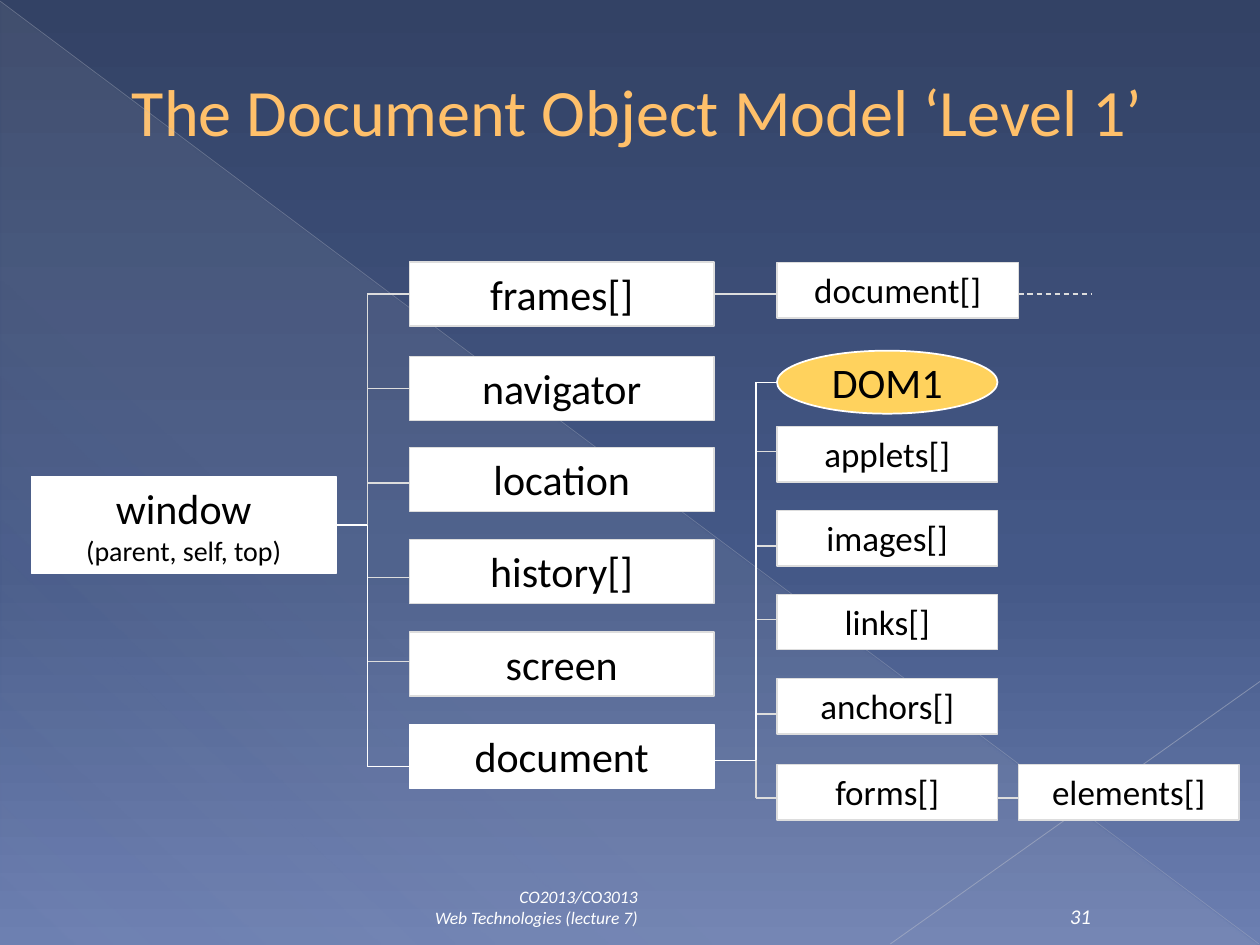
from lxml import etree
from pptx import Presentation
from pptx import util as u
from pptx.dml.color import RGBColor
from pptx.enum import dml, shapes, text
from pptx.oxml import ns

COLORS = {
    "top": "334265", "middle": "445887", "bottom": "6C7FB1",
    "veil": "D4D4D6", "ray": "B9BDC8", "ray_low": "C1C4CE",
    "title": "FFC06A", "title_edge": "A67800", "gold": "FFD25D",
    "white": "FFFFFF", "grey": "DDDDDD", "black": "000000",
}
FONT = "Calibri"
COLS, ROWS = 120, 90
LEFT, RIGHT = 1, 3  # connection sites of a rectangle


def rgb(name):
    return RGBColor.from_string(COLORS[name])


def add_node(parent, tag, **attributes):
    node = etree.SubElement(parent, ns.qn(tag))
    for key, value in attributes.items():
        node.set(key, str(value))
    return node


class Diagram:
    """Draws on one page, on a grid of COLS by ROWS."""

    def __init__(self, deck):
        self.deck = deck
        self.page = deck.slides.add_slide(deck.slide_layouts[5])

    def x(self, col):
        return round(self.deck.slide_width * col / COLS)

    def y(self, row):
        return round(self.deck.slide_height * row / ROWS)

    def area(self, col, row, cols, rows):
        return self.x(col), self.y(row), self.x(cols), self.y(rows)

    def style(self, para, size, color, align, italic=None):
        para.alignment = align
        for span in para.runs:
            span.font.name = FONT
            span.font.size = u.Pt(size)
            span.font.italic = italic
            span.font.color.rgb = rgb(color)

    def gradient(self, fill, element, stops, angle):
        fill.gradient()
        grad = next(element.iter(ns.qn("a:gradFill")))
        for child in list(grad):
            grad.remove(child)
        stop_list = add_node(grad, "a:gsLst")
        for place, color, alpha in stops:
            stop = add_node(stop_list, "a:gs", pos=place * 1000)
            node = add_node(stop, "a:srgbClr", val=COLORS[color])
            if alpha < 100:
                add_node(node, "a:alpha", val=alpha * 1000)
        add_node(grad, "a:lin", ang=angle * 60000, scaled=0)

    def backdrop(self):
        background = self.page.background
        self.gradient(background.fill, self.page.element,
                      [(0, "top", 100), (60, "middle", 100), (100, "bottom", 100)], 90)
        veil = self.page.shapes.add_shape(
            shapes.MSO_SHAPE.RIGHT_TRIANGLE, *self.area(0.1, 0.2, 119.8, 89.8))
        veil.shadow.inherit = False
        veil.line.fill.background()
        self.gradient(veil.fill, veil.element,
                      [(0, "veil", 10), (70, "veil", 8), (100, "veil", 1)], 133)

    def title(self, wording):
        box = self.page.shapes.title
        box.left, box.top, box.width, box.height = self.area(5, 3, 110, 15)
        frame = box.text_frame
        frame.text = wording
        frame.auto_size = text.MSO_AUTO_SIZE.NONE
        frame.vertical_anchor = text.MSO_ANCHOR.MIDDLE
        para = frame.paragraphs[0]
        self.style(para, 37.8, "title", text.PP_ALIGN.LEFT)
        props = para._p.get_or_add_pPr()
        props.set("marL", str(u.Inches(0.53)))
        props.set("indent", "0")
        # Thin edge around the letters
        edge = etree.Element(ns.qn("a:ln"), w=str(u.Pt(0.5)))
        add_node(add_node(edge, "a:solidFill"), "a:srgbClr", val=COLORS["title_edge"])
        para.runs[0].font._element.insert(0, edge)

    def footer(self, wording, col, cols, size, align):
        box = self.page.shapes.add_textbox(*self.area(col, 85.1, cols, 3.9))
        frame = box.text_frame
        frame.word_wrap = True
        frame.vertical_anchor = text.MSO_ANCHOR.BOTTOM
        frame.paragraphs[0].text = wording
        self.style(frame.paragraphs[0], size, "white", align, italic=True)

    def box(self, wording, col, row, cols, rows, size=24, edge="grey",
            preset=shapes.MSO_SHAPE.RECTANGLE, fill="white"):
        box = self.page.shapes.add_shape(preset, *self.area(col, row, cols, rows))
        box.shadow.inherit = False
        box.fill.solid()
        box.fill.fore_color.rgb = rgb(fill)
        box.line.color.rgb = rgb(edge)
        box.line.width = u.Pt(0.75)
        frame = box.text_frame
        frame.word_wrap = True
        frame.auto_size = text.MSO_AUTO_SIZE.SHAPE_TO_FIT_TEXT
        frame.vertical_anchor = text.MSO_ANCHOR.TOP
        frame.paragraphs[0].text = wording
        self.style(frame.paragraphs[0], size, "black", text.PP_ALIGN.CENTER)
        return box

    def ellipse(self, wording, col, row, cols, rows):
        oval = self.box(wording, col, row, cols, rows, edge="white",
                        preset=shapes.MSO_SHAPE.OVAL, fill="gold")
        oval.line.width = u.Pt(1)
        oval.text_frame.auto_size = text.MSO_AUTO_SIZE.NONE
        oval.text_frame.word_wrap = False
        oval.text_frame.vertical_anchor = text.MSO_ANCHOR.MIDDLE

    def line(self, start, end, color="grey", width=0.75, alpha=100, dashed=False):
        line = self.page.shapes.add_connector(
            shapes.MSO_CONNECTOR.STRAIGHT,
            self.x(start[0]), self.y(start[1]), self.x(end[0]), self.y(end[1]))
        line.line.color.rgb = rgb(color)
        line.line.width = u.Pt(width)
        if dashed:
            line.line.dash_style = dml.MSO_LINE.DASH
        props = line.element.spPr
        if alpha < 100:
            add_node(next(props.iter(ns.qn("a:srgbClr"))), "a:alpha", val=alpha * 1000)
        add_node(props, "a:effectLst")
        return line


def main():
    deck = Presentation()
    deck.slide_width, deck.slide_height = u.Inches(10), u.Inches(7.5)
    diagram = Diagram(deck)

    # Backdrop, title and footer
    diagram.backdrop()
    diagram.line((0, 0.1), (119.9, 89.9), "ray", 0.39, alpha=35)
    diagram.line((120, 64.9), (84.8, 89.9), "ray_low", 0.47, alpha=45)
    diagram.title("The Document Object Model ‘Level 1’")
    diagram.footer("CO2013/CO3013\vWeb Technologies (lecture 7)", 6, 55.9, 10,
                   text.PP_ALIGN.RIGHT)
    diagram.footer("31", 99.6, 6.6, 12, text.PP_ALIGN.CENTER)

    # Window and its properties, joined by a trunk
    window = diagram.box("window\v(parent, self, top)", 3, 45.4, 29, 9.2, edge="white")
    window.text_frame.paragraphs[0].runs[1].font.size = u.Pt(16)
    diagram.line((32, 50), (35, 50), "white").begin_connect(window, RIGHT)
    properties = [
        ("frames[]", 24.95, 28), ("navigator", 33.95, 37), ("location", 42.6, 46),
        ("history[]", 51.4, 55), ("screen", 60.2, 63), ("document", 69, 73),
    ]
    boxes = {}
    for name, row, branch in properties:
        color = "white" if name == "document" else "grey"
        boxes[name] = diagram.box(name, 39, row, 29, 6.1, edge=color)
        twig = diagram.line((35, branch), (39, branch), color)
        if name in ("frames[]", "navigator"):
            twig.end_connect(boxes[name], LEFT)
    diagram.line((35, 28), (35, 51))
    diagram.line((35, 50), (35, 73), "white")

    # Documents inside the frames
    diagram.box("document[]", 74, 25, 23, 5.3, size=20)
    diagram.line((68, 28), (74, 28)).begin_connect(boxes["frames[]"], RIGHT)
    diagram.line((97, 28), (104, 28), dashed=True)

    # Collections of the document
    collections = [
        ("applets[]", 40.6, 43), ("images[]", 48.6, 52), ("links[]", 56.6, 59),
        ("anchors[]", 64.6, 68), ("forms[]", 72.8, 76),
    ]
    for name, row, branch in collections:
        diagram.box(name, 74, row, 21, 5.3, size=20)
        diagram.line((72, branch), (74, branch))
    diagram.line((72, 43), (72, 76))
    diagram.box("elements[]", 97, 72.8, 21, 5.3, size=20)
    diagram.line((95, 76), (97, 76))

    # Level 1 model, reached from the document
    diagram.line((68, 72.4), (72, 72.4), "white")
    diagram.line((72, 72.4), (72, 36.4), "white")
    diagram.line((72, 36.4), (74, 36.4), "white")
    diagram.ellipse("DOM1", 74, 33.4, 21, 6)

    deck.save("out.pptx")


if __name__ == "__main__":
    main()
